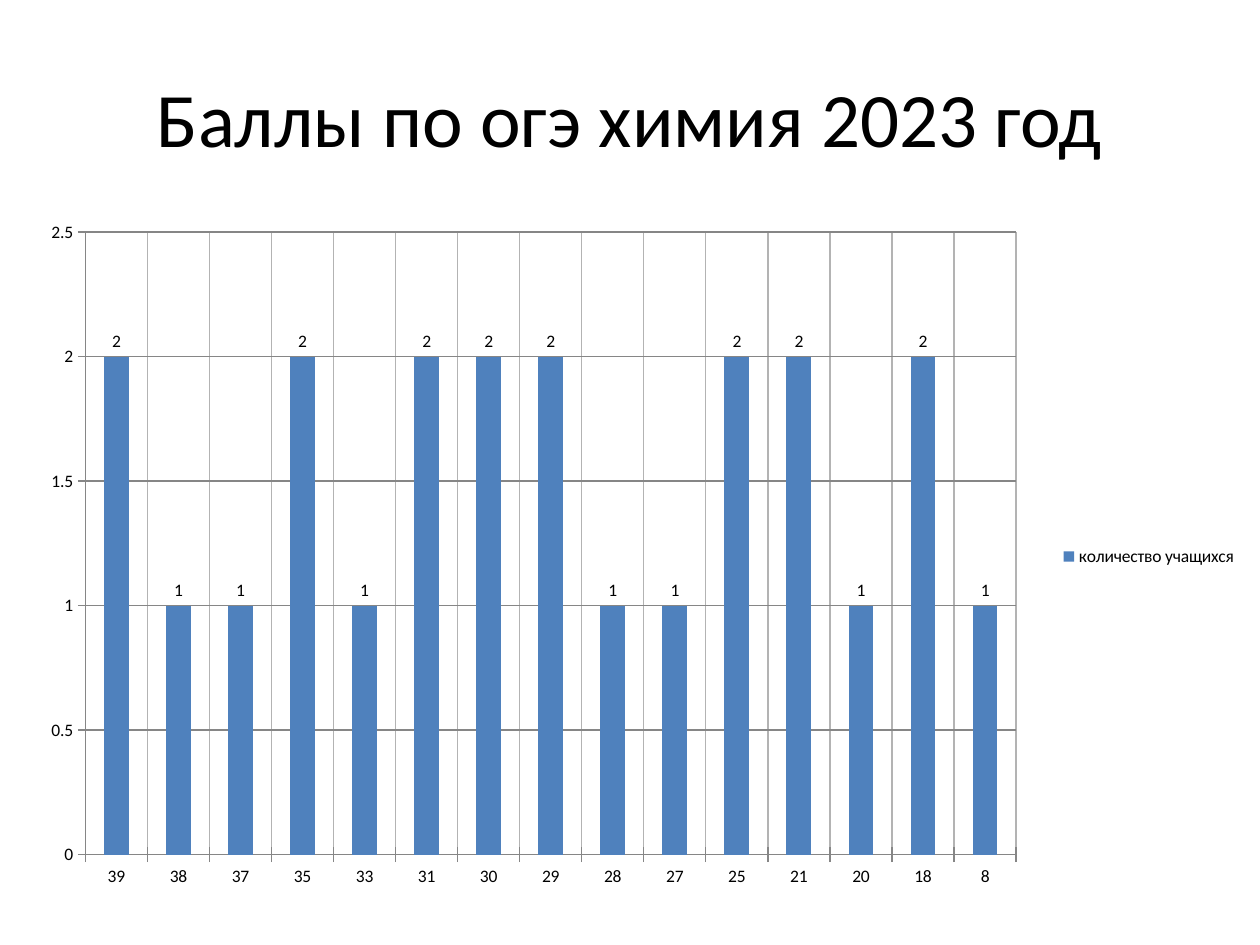
from dataclasses import dataclass

from lxml.etree import SubElement
from pptx import Presentation
from pptx.chart.data import CategoryChartData
from pptx.dml.color import RGBColor
from pptx.enum.chart import XL_CHART_TYPE as ChartType
from pptx.enum.chart import XL_LABEL_POSITION as LabelPos
from pptx.enum.chart import XL_LEGEND_POSITION as LegendPos
from pptx.enum.chart import XL_TICK_MARK as Tick
from pptx.enum.text import MSO_ANCHOR as Anchor
from pptx.enum.text import PP_ALIGN as Align
from pptx.oxml import parse_xml
from pptx.oxml.ns import nsdecls, qn
from pptx.util import Cm, Pt


@dataclass(frozen=True)
class Theme:
    font: str = "Calibri"
    text: RGBColor = RGBColor(0, 0, 0)
    bar: RGBColor = RGBColor(0x4F, 0x81, 0xBD)
    axis: RGBColor = RGBColor(0x86, 0x86, 0x86)
    cat_grid: RGBColor = RGBColor(0xB3, 0xB3, 0xB3)
    title_size: int = 44
    chart_size: int = 10


def format_font(font, theme, size):
    font.name, font.size = theme.font, Pt(size)
    font.color.rgb = theme.text


def write_text(tf, text, *, theme, size, align=Align.LEFT, anchor=Anchor.TOP):
    tf.word_wrap = True
    tf.vertical_anchor = anchor
    p = tf.paragraphs[0]
    p.alignment = align
    r = p.add_run()
    r.text = text
    format_font(r.font, theme, size)


def set_plot_layout(chart, x, y, w, h):
    """Fix the inner plot area, in fractions of the chart frame."""
    plot_area = chart._chartSpace.chart.plotArea
    for old in plot_area.findall(qn("c:layout")):
        plot_area.remove(old)
    layout = parse_xml(f"<c:layout {nsdecls('c')}/>")
    manual = SubElement(layout, qn("c:manualLayout"))
    settings = {"layoutTarget": "inner", "xMode": "edge", "yMode": "edge",
                "x": x, "y": y, "w": w, "h": h}
    for name, value in settings.items():
        SubElement(manual, qn(f"c:{name}")).set("val", str(value))
    plot_area.insert(0, layout)


class SlideBuilder:
    def __init__(self, prs, theme):
        self.theme = theme
        self.s = prs.slides.add_slide(prs.slide_layouts[5])

    def title(self, text, x, y, w, h):
        sp = self.s.shapes.title
        sp.left, sp.top, sp.width, sp.height = x, y, w, h
        write_text(sp.text_frame, text, theme=self.theme,
                   size=self.theme.title_size, align=Align.CENTER,
                   anchor=Anchor.MIDDLE)

    def column_chart(self, name, counts, x, y, w, h):
        data = CategoryChartData(number_format="General")
        data.categories = list(counts)
        data.add_series(name, counts.values())
        chart = self.s.shapes.add_chart(
            ChartType.COLUMN_CLUSTERED, x, y, w, h, data).chart
        format_font(chart.font, self.theme, self.theme.chart_size)
        chart.has_title = False
        chart.has_legend = True
        chart.legend.position = LegendPos.RIGHT
        chart.legend.include_in_layout = False

        plot = chart.plots[0]
        plot.gap_width = 150
        plot.vary_by_categories = False
        fill = plot.series[0].format.fill
        fill.solid()
        fill.fore_color.rgb = self.theme.bar
        plot.has_data_labels = True
        labels = plot.data_labels
        labels.show_value = True
        labels.position = LabelPos.OUTSIDE_END
        format_font(labels.font, self.theme, self.theme.chart_size)

        self.axis(chart.category_axis, self.theme.cat_grid)
        self.axis(chart.value_axis, self.theme.axis)
        chart.value_axis.minimum_scale = 0
        chart.value_axis.maximum_scale = 2.5
        chart.value_axis.major_unit = 0.5
        return chart

    def axis(self, axis, grid_color):
        axis.major_tick_mark = Tick.CROSS
        axis.has_major_gridlines = True
        for line, color in ((axis.format.line, self.theme.axis),
                            (axis.major_gridlines.format.line, grid_color)):
            line.color.rgb = color
            line.width = Pt(0.75)


def main():
    prs = Presentation()
    prs.slide_width, prs.slide_height = Cm(25.4), Cm(19.05)
    slide = SlideBuilder(prs, Theme())
    slide.title("Баллы по огэ химия 2023 год",
                Cm(1.27), Cm(0.76), Cm(22.86), Cm(3.18))
    students_by_score = {
        "39": 2, "38": 1, "37": 1, "35": 2, "33": 1, "31": 2, "30": 2, "29": 2,
        "28": 1, "27": 1, "25": 2, "21": 2, "20": 1, "18": 2, "8": 1,
    }
    chart = slide.column_chart("количество учащихся", students_by_score,
                               Cm(0.64), Cm(4.45), Cm(24.56), Cm(13.54))
    set_plot_layout(chart, 0.044, 0.017, 0.764, 0.927)
    prs.save("out.pptx")


if __name__ == "__main__":
    main()
